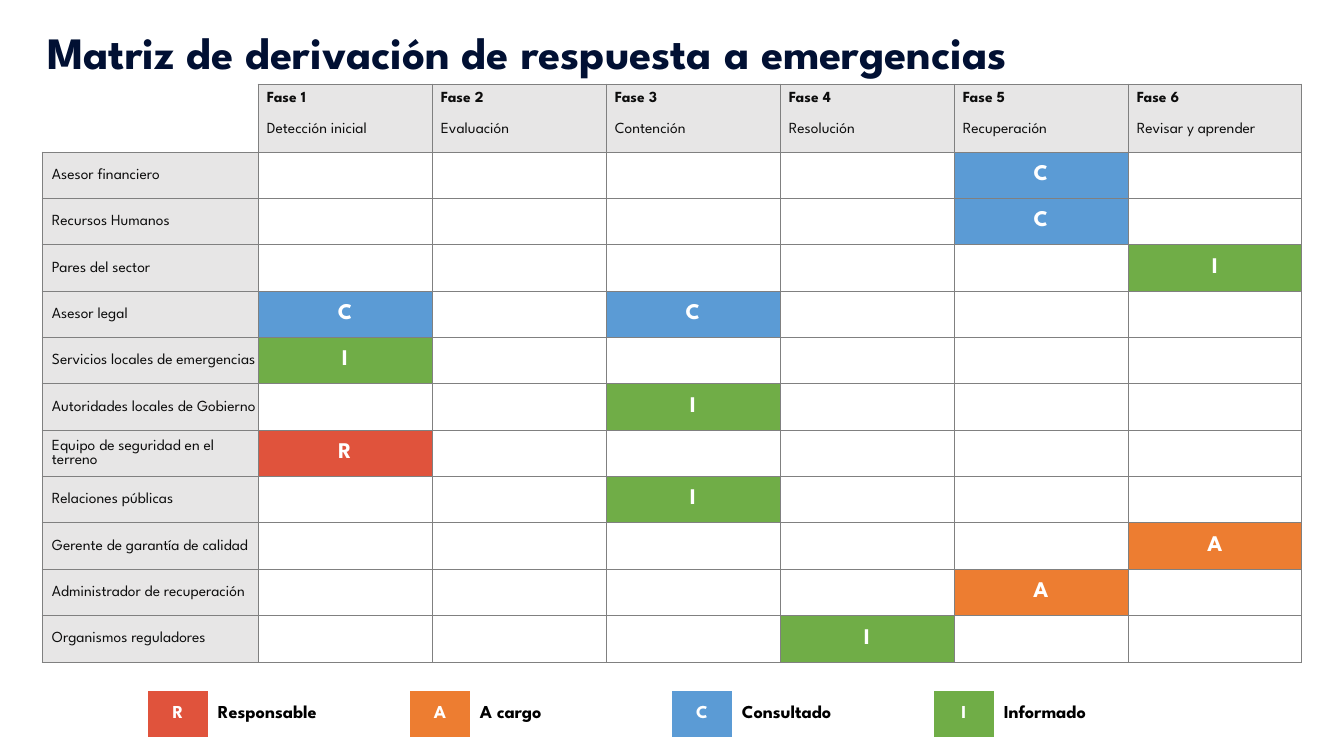
"""Build the emergency response escalation matrix slide."""
from lxml.etree import SubElement as add_element
from pptx import Presentation
from pptx.dml.color import RGBColor
from pptx.enum.text import MSO_ANCHOR as Anchor, MSO_AUTO_SIZE as AutoSize, PP_ALIGN as Align
from pptx.oxml.ns import qn
from pptx.util import Emu, Pt

FONT = "League Spartan"
NAVY = RGBColor(0x01, 0x10, 0x33)
INK = RGBColor(0x0D, 0x0D, 0x0D)
BLACK = RGBColor(0, 0, 0)
WHITE = RGBColor(0xFF, 0xFF, 0xFF)
PALE = RGBColor(0xE7, 0xE6, 0xE6)
GREY = RGBColor(0x80, 0x80, 0x80)
RED = RGBColor(0xE0, 0x53, 0x3C)
ORANGE = RGBColor(0xED, 0x7D, 0x31)
BLUE = RGBColor(0x5B, 0x9B, 0xD5)
GREEN = RGBColor(0x70, 0xAD, 0x47)

TITLE = "Matriz de derivación de respuesta a emergencias"
PHASES = [
    ("Fase 1", "Detección inicial"),
    ("Fase 2", "Evaluación"),
    ("Fase 3", "Contención"),
    ("Fase 4", "Resolución"),
    ("Fase 5", "Recuperación"),
    ("Fase 6", "Revisar y aprender"),
]
ACTORS = [
    ("Asesor financiero", {5: "C"}),
    ("Recursos Humanos", {5: "C"}),
    ("Pares del sector", {6: "I"}),
    ("Asesor legal", {1: "C", 3: "C"}),
    ("Servicios locales de emergencias", {1: "I"}),
    ("Autoridades locales de Gobierno", {3: "I"}),
    ("Equipo de seguridad en el terreno", {1: "R"}),
    ("Relaciones públicas", {3: "I"}),
    ("Gerente de garantía de calidad", {6: "A"}),
    ("Administrador de recuperación", {5: "A"}),
    ("Organismos reguladores", {4: "I"}),
]
ROLES = {
    "R": ("Responsable", RED),
    "A": ("A cargo", ORANGE),
    "C": ("Consultado", BLUE),
    "I": ("Informado", GREEN),
}

SLIDE_SIZE = (1344, 756)
TITLE_BOX = (37, 19, 1185, 65)
MATRIX_AT = (42, 84)
MATRIX_COLUMNS = [216] + [174] * len(PHASES)
HEADER_ROWS = [29, 39]
ACTORS_HEIGHT = 510
LEGEND_AT = (148, 691)
LEGEND_COLUMNS = [60, 202] * len(ROLES)
LEGEND_ROW = 46


def px(length):
    return Emu(round(length * 914400 / 100.8))


def set_font(para, size, color, bold):
    font = para.font
    font.name, font.size, font.bold = FONT, Pt(size), bold
    font.color.rgb = color


def add_grid(page, at, columns, rows):
    frame = page.shapes.add_table(
        len(rows), len(columns), *map(px, (*at, sum(columns), sum(rows))))
    table = frame.table
    table.first_row = table.horz_banding = False
    for column, width in zip(table.columns, columns):
        column.width = px(width)
    for row, height in zip(table.rows, rows):
        row.height = px(height)
    return table


def set_borders(cell, sides):
    properties = cell._tc.get_or_add_tcPr()
    for side in "LRTB":
        line = add_element(properties, qn(f"a:ln{side}"), w=str(Pt(0.5)))
        if side in sides:
            paint = add_element(line, qn("a:solidFill"))
            add_element(paint, qn("a:srgbClr"), val=str(GREY))
        else:
            add_element(line, qn("a:noFill"))


def fill_cell(cell, text, fill, size=11, color=INK, bold=False, sides="",
              align=Align.LEFT, anchor=Anchor.MIDDLE, margins=(0, 0, 0, 0)):
    set_borders(cell, sides)
    cell.fill.solid()
    cell.fill.fore_color.rgb = fill
    cell.margin_left, cell.margin_top, cell.margin_right, cell.margin_bottom = map(px, margins)
    cell.vertical_anchor = anchor
    para = cell.text_frame.paragraphs[0]
    if text:
        para.text = text
    para.alignment = align
    set_font(para, size, color, bold)


def add_matrix(page):
    actor_rows = [ACTORS_HEIGHT / len(ACTORS)] * len(ACTORS)
    table = add_grid(page, MATRIX_AT, MATRIX_COLUMNS, HEADER_ROWS + actor_rows)
    fill_cell(table.cell(0, 0), "", WHITE, sides="R")
    fill_cell(table.cell(1, 0), "", WHITE, sides="RB")
    for column, (phase, name) in enumerate(PHASES, 1):
        fill_cell(table.cell(0, column), phase, PALE, bold=True, sides="LTR",
                  margins=(9, 1, 1, 0))
        fill_cell(table.cell(1, column), name, PALE, sides="LRB",
                  anchor=Anchor.TOP, margins=(9, 10, 1, 10))
    for row, (actor, duties) in enumerate(ACTORS, len(HEADER_ROWS)):
        fill_cell(table.cell(row, 0), actor, PALE, sides="LRTB", margins=(10, 1, 1, 0))
        for column in range(1, len(MATRIX_COLUMNS)):
            role = duties.get(column, "")
            fill = ROLES[role][1] if role else WHITE
            fill_cell(table.cell(row, column), role, fill, 16, WHITE, True, "LRTB",
                      Align.CENTER)


def add_legend(page):
    table = add_grid(page, LEGEND_AT, LEGEND_COLUMNS, [LEGEND_ROW])
    for index, (role, (name, color)) in enumerate(ROLES.items()):
        fill_cell(table.cell(0, 2 * index), role, color, 13, WHITE, True,
                  align=Align.CENTER, margins=(1, 1, 1, 0))
        fill_cell(table.cell(0, 2 * index + 1), name, WHITE, 13, BLACK, True,
                  margins=(10, 1, 1, 0))


def add_title(page):
    box = page.shapes.title
    box.left, box.top, box.width, box.height = map(px, TITLE_BOX)
    frame = box.text_frame
    frame.text = TITLE
    frame.word_wrap = True
    frame.auto_size = AutoSize.NONE
    frame.vertical_anchor = Anchor.MIDDLE
    para = frame.paragraphs[0]
    para.alignment = Align.LEFT
    set_font(para, 32, NAVY, True)


def main():
    deck = Presentation()
    deck.slide_width, deck.slide_height = map(px, SLIDE_SIZE)
    page = deck.slides.add_slide(deck.slide_layouts[5])
    add_title(page)
    add_matrix(page)
    add_legend(page)
    deck.save("out.pptx")


if __name__ == "__main__":
    main()
